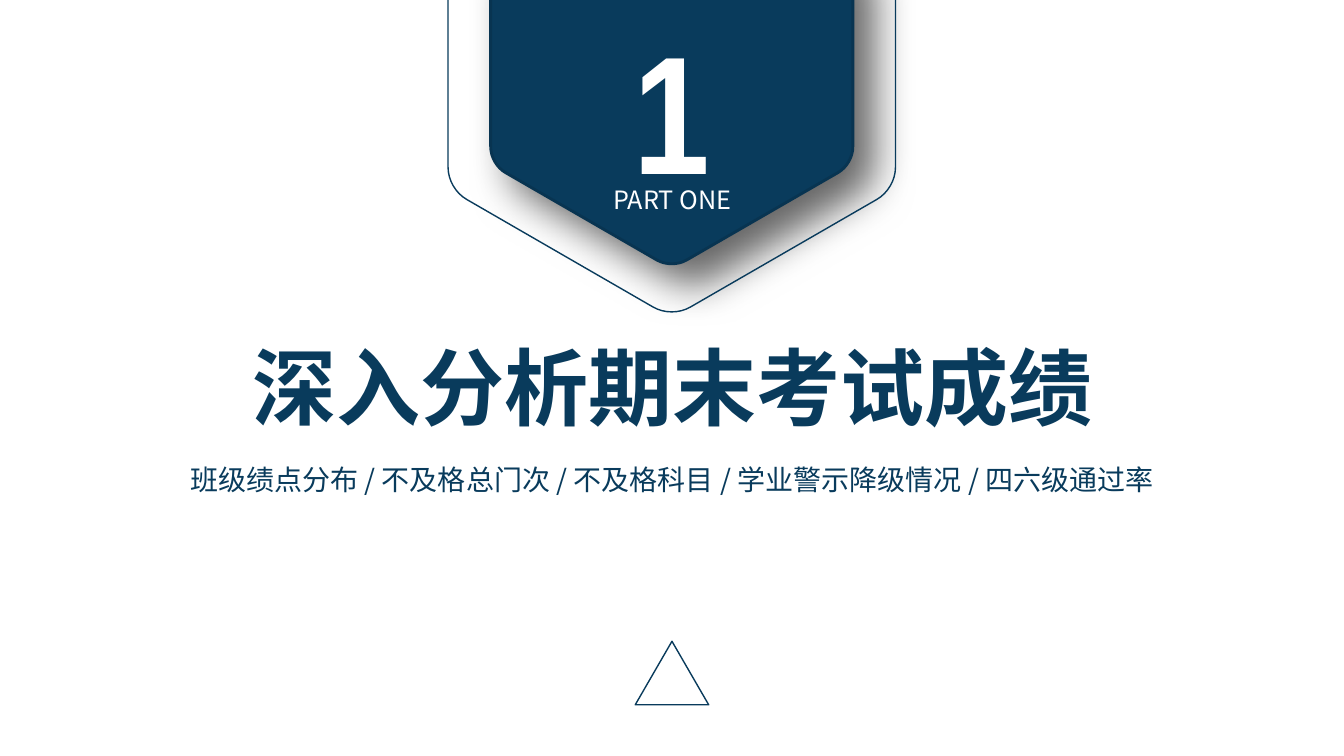
import math
from dataclasses import dataclass

from lxml import etree
from pptx import Presentation
from pptx import util as u
from pptx.dml.color import RGBColor
from pptx.enum import shapes, text
from pptx.oxml.ns import qn


@dataclass(frozen=True)
class Theme:
    navy: str = "093B5C"
    navy_edge: str = "083451"
    white: str = "FFFFFF"
    shadow: str = "000000"
    font: str = "Noto Sans CJK SC"
    number_font: str = "Arial Narrow"
    number_size: int = 120
    title_size: int = 60
    topics_size: int = 20
    label_size: int = 18


class SectionSlide:
    def __init__(self, presentation, theme):
        self.theme = theme
        self.slide = presentation.slides.add_slide(presentation.slide_layouts[6])

    def add_text(self, content, box, size, color, font=None, bold=False):
        shape = self.slide.shapes.add_textbox(*map(u.Cm, box))
        frame = shape.text_frame
        frame.word_wrap = True
        frame.auto_size = text.MSO_AUTO_SIZE.SHAPE_TO_FIT_TEXT
        paragraph = frame.paragraphs[0]
        paragraph.alignment = text.PP_ALIGN.CENTER
        run = paragraph.add_run()
        run.text = content
        run.font.size = u.Pt(size)
        run.font.bold = bold
        run.font.color.rgb = RGBColor.from_string(color)
        run.font.name = font or self.theme.font
        east_asian = etree.SubElement(run.font._element, qn("a:ea"))
        east_asian.set("typeface", self.theme.font)

    def add_hexagon(self, center, radius, line, line_width, fill=None):
        """Draw a pointed-top regular hexagon with rounded corners."""
        corners = rounded_corners([u.Cm(value) for value in center], u.Cm(radius))
        outline = [point for first, pull_in, pull_out, last in corners
                   for point in (first, curve_middle(first, pull_in, pull_out, last), last)]
        builder = self.slide.shapes.build_freeform(*outline[0], scale=1.0)
        builder.add_line_segments(outline[1:], close=True)
        shape = builder.convert_to_shape()
        self.curve_corners(shape, corners)
        self.style(shape, line, line_width, fill)
        return shape

    def curve_corners(self, shape, corners):
        """Replace the straight corner segments of the outline with curves."""
        outline = next(shape._element.iter(qn("a:path")))
        for segment in list(outline):
            outline.remove(segment)

        def add_segment(tag, *points):
            segment = etree.SubElement(outline, qn(tag))
            for x, y in points:
                etree.SubElement(segment, qn("a:pt"), x=str(round(x - shape.left)),
                                 y=str(round(y - shape.top)))

        add_segment("a:moveTo", corners[-1][-1])
        previous = corners[-1][-1]
        for first, pull_in, pull_out, last in corners:
            add_segment("a:lnTo", between(previous, first, 0.5))
            add_segment("a:lnTo", first)
            add_segment("a:cubicBezTo", pull_in, pull_out, last)
            previous = last
        etree.SubElement(outline, qn("a:close"))

    def add_triangle(self, box, line, line_width):
        shape = self.slide.shapes.add_shape(
            shapes.MSO_SHAPE.ISOSCELES_TRIANGLE, *map(u.Cm, box))
        self.style(shape, line, line_width)

    def style(self, shape, line, line_width, fill=None):
        shape.shadow.inherit = False
        shape.line.color.rgb = RGBColor.from_string(line)
        shape.line.width = u.Pt(line_width)
        if fill:
            shape.fill.solid()
            shape.fill.fore_color.rgb = RGBColor.from_string(fill)
        else:
            shape.fill.background()

    def add_shadow(self, shape, blur, distance, angle, opacity):
        effects = shape._element.spPr.find(qn("a:effectLst"))
        shadow = etree.SubElement(
            effects, qn("a:outerShdw"), blurRad=str(u.Pt(blur)),
            dist=str(u.Pt(distance)), dir=str(angle * 60000),
            algn="tl", rotWithShape="0")
        color = etree.SubElement(shadow, qn("a:srgbClr"), val=self.theme.shadow)
        etree.SubElement(color, qn("a:alpha"), val=str(opacity * 1000))


def between(start, end, share):
    return tuple(a + (b - a) * share for a, b in zip(start, end))


def curve_middle(first, pull_in, pull_out, last):
    return tuple((a + 3 * b + 3 * c + d) / 8
                 for a, b, c, d in zip(first, pull_in, pull_out, last))


def rounded_corners(center, radius, cut=1 / 12, pull=0.6):
    """Return the four control points of each corner curve, clockwise from the top."""
    tips = [(center[0] + radius * math.cos(math.radians(angle)),
             center[1] + radius * math.sin(math.radians(angle)))
            for angle in range(-90, 270, 60)]
    corners = []
    for index, tip in enumerate(tips):
        first = between(tip, tips[index - 1], cut)
        last = between(tip, tips[(index + 1) % 6], cut)
        corners.append((first, between(first, tip, pull),
                        between(last, tip, pull), last))
    return corners


def main():
    theme = Theme()
    presentation = Presentation()
    presentation.slide_width = u.Cm(33.87)
    presentation.slide_height = u.Cm(19.05)
    section = SectionSlide(presentation, theme)

    section.add_text("深入分析期末考试成绩", (5.14, 8.33, 23.6, 2.82),
                     theme.title_size, theme.navy, bold=True)
    section.add_text(
        "班级绩点分布 / 不及格总门次 / 不及格科目 / 学业警示降级情况 / 四六级通过率",
        (4.09, 11.53, 25.69, 1.12), theme.topics_size, theme.navy)

    badge_center = (16.93, 1.5)
    badge = section.add_hexagon(badge_center, 5.27, theme.navy_edge, 2, theme.navy)
    section.add_shadow(badge, blur=30, distance=20, angle=45, opacity=60)
    section.add_hexagon(badge_center, 6.51, theme.navy, 1)

    section.add_text("1", (15.07, 0.05, 3.73, 5.38), theme.number_size,
                     theme.white, theme.number_font, bold=True)
    section.add_text("PART ONE", (14.39, 4.52, 5.11, 1.02),
                     theme.label_size, theme.white)
    section.add_triangle((16.01, 16.16, 1.85, 1.6), theme.navy, 1)

    presentation.save("out.pptx")


if __name__ == "__main__":
    main()
